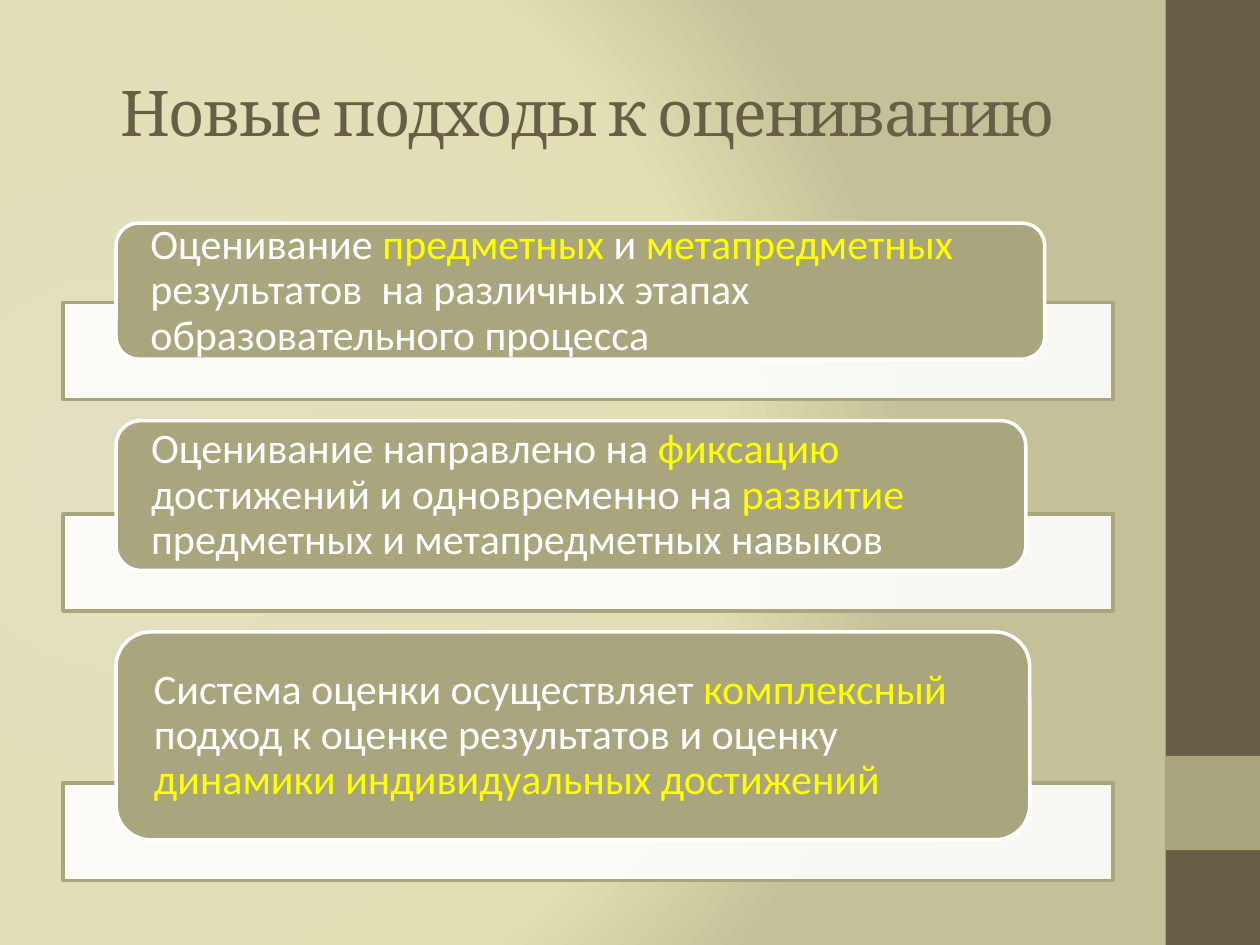
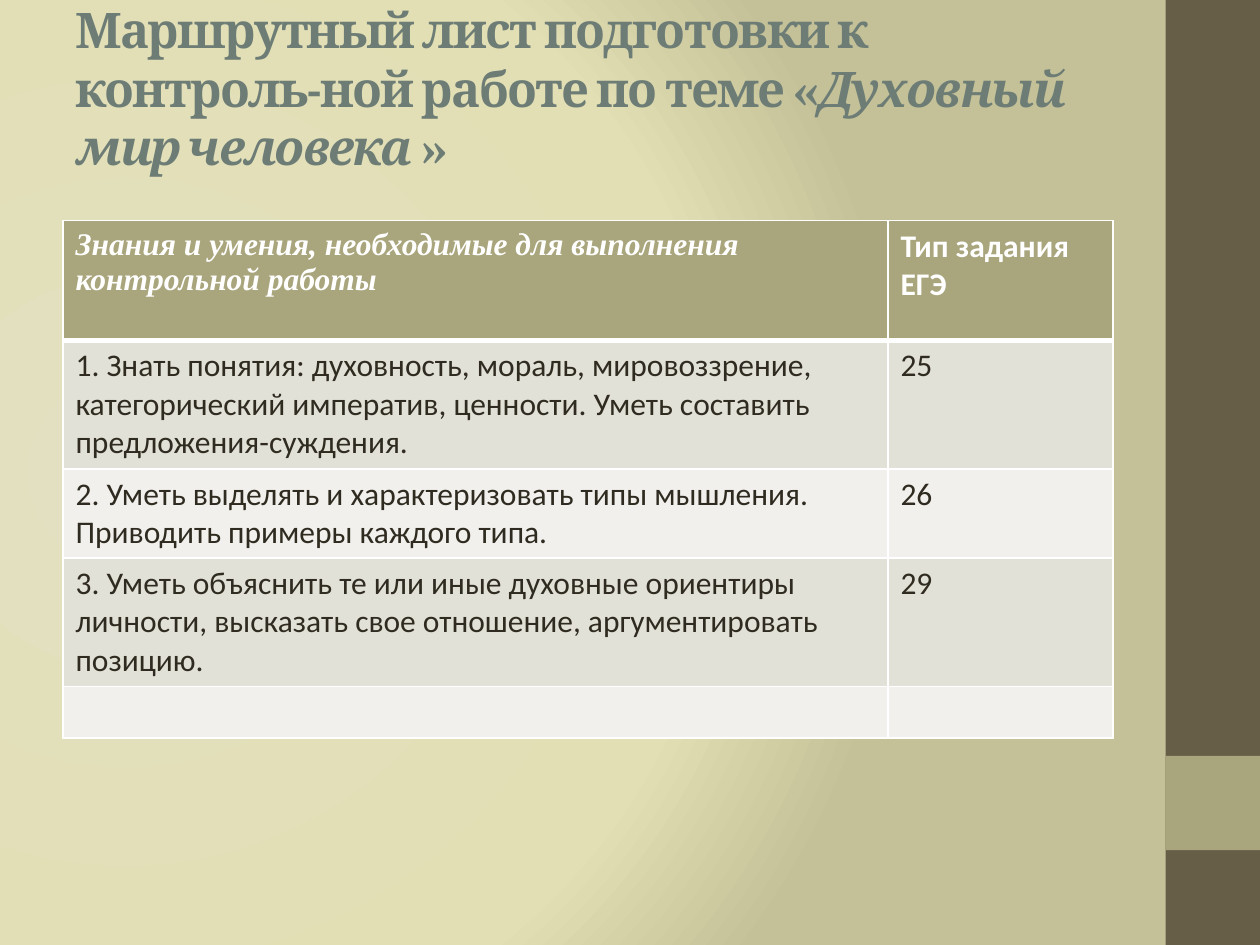
"""Build two slides on new assessment approaches and a test preparation sheet."""
from dataclasses import dataclass
from typing import NamedTuple, Optional

from lxml import etree
from pptx import Presentation
from pptx.dml.color import RGBColor
from pptx.enum import shapes, text
from pptx.oxml import parse_xml
from pptx.oxml.ns import nsdecls, qn
from pptx.util import Cm, Pt

WHITE = RGBColor(0xFF, 0xFF, 0xFF)
YELLOW = RGBColor(0xFF, 0xFF, 0x00)
BROWN = RGBColor(0x67, 0x5E, 0x47)
OLIVE = RGBColor(0xA9, 0xA5, 0x7C)
SLATE = RGBColor(0x6D, 0x7D, 0x76)
INK = RGBColor(0x2F, 0x2B, 0x20)
BAND_DARK = RGBColor(0xE2, 0xE1, 0xD7)
BAND_LIGHT = RGBColor(0xF1, 0xF0, 0xEC)
BACKDROP = (
    (0, RGBColor(0xE2, 0xE0, 0xC0)),
    (75, RGBColor(0xE2, 0xDF, 0xB4)),
    (100, RGBColor(0xC4, 0xC1, 0x98)),
)

HEADING, BODY, SERIF = "Cambria", "Calibri", "Times New Roman"
LEFT, CONTENT_W = 1.27, 21.17
SIDE_LEFT, SIDE_W = 23.5, 1.9
SLIDE_W, SLIDE_H = 25.4, 19.05
CARD_LEFT, CARDS_TOP = 2.34, 4.5
BAR_H, BAR_OVERLAP, CARD_GAP = 1.96, 1.14, 0.42


class Box(NamedTuple):
    """Position and size in centimetres."""
    left: float
    top: float
    width: float
    height: float

    def emu(self) -> list:
        """Return the four lengths for python-pptx."""
        return [Cm(v) for v in self]


@dataclass(frozen=True)
class Style:
    """Character formatting of a run."""
    font: str
    size: int
    color: RGBColor
    bold: bool = False
    italic: bool = False
    spacing: int = 0


class Span(NamedTuple):
    """A piece of text with its style."""
    words: str
    style: Style


class Card(NamedTuple):
    """A rounded card standing on a bar."""
    width: float
    height: float
    spans: tuple


class Row(NamedTuple):
    """A table row with its height, fill and cell spans."""
    height: float
    fill: RGBColor
    cells: tuple


TITLE = Style(HEADING, 36, BROWN, spacing=-100)
TOPIC = Style(HEADING, 28, SLATE, bold=True, spacing=-100)
TOPIC_NAME = Style(HEADING, 28, SLATE, bold=True, italic=True, spacing=-100)
PLAIN = Style(BODY, 24, WHITE)
KEY = Style(BODY, 24, YELLOW)
HEAD_SERIF = Style(SERIF, 18, WHITE, bold=True, italic=True)
HEAD = Style(BODY, 18, WHITE, bold=True)
CELL = Style(BODY, 18, INK)

CARDS = (
    Card(18.72, 2.74, (
        Span("Оценивание ", PLAIN),
        Span("предметных", KEY),
        Span(" и ", PLAIN),
        Span("метапредметных ", KEY),
        Span("результатов  на различных этапах образовательного процесса", PLAIN),
    )),
    Card(18.34, 3.02, (
        Span("Оценивание направлено на ", PLAIN),
        Span("фиксацию ", KEY),
        Span("достижений и одновременно на ", PLAIN),
        Span("развитие ", KEY),
        Span("предметных и метапредметных навыков", PLAIN),
    )),
    Card(18.42, 4.19, (
        Span("Система оценки осуществляет ", PLAIN),
        Span("комплексный ", KEY),
        Span("подход к оценке результатов и оценку ", PLAIN),
        Span("динамики индивидуальных достижений", KEY),
    )),
)

COLUMNS = (16.63, 4.54)
ROWS = (
    Row(2.41, OLIVE, (
        Span("Знания и умения, необходимые для выполнения контрольной работы", HEAD_SERIF),
        Span("Тип задания ЕГЭ", HEAD),
    )),
    Row(2.59, BAND_DARK, (
        Span("1. Знать понятия: духовность, мораль, мировоззрение, категорический "
             "императив, ценности. Уметь составить предложения-суждения.", CELL),
        Span("25", CELL),
    )),
    Row(1.8, BAND_LIGHT, (
        Span("2. Уметь выделять и характеризовать типы мышления. "
             "Приводить примеры каждого типа.", CELL),
        Span("26", CELL),
    )),
    Row(2.59, BAND_DARK, (
        Span("3. Уметь объяснить те или иные духовные ориентиры личности, "
             "высказать свое отношение, аргументировать позицию.", CELL),
        Span("29", CELL),
    )),
    Row(1.04, BAND_LIGHT, (None, None)),
)


def add_runs(p, spans: tuple) -> None:
    """Append styled runs to a paragraph."""
    for span in spans:
        r = p.add_run()
        r.text = span.words
        style = span.style
        r.font.name, r.font.size = style.font, Pt(style.size)
        r.font.bold, r.font.italic = style.bold, style.italic
        r.font.color.rgb = style.color
        if style.spacing:
            r._r.get_or_add_rPr().set("spc", str(style.spacing))


def add_block(slide, kind, box: Box, fill: RGBColor,
              line: Optional[RGBColor] = None, alpha: int = 100):
    """Draw a filled preset shape without a shadow."""
    sp = slide.shapes.add_shape(kind, *box.emu())
    sp.shadow.inherit = False
    sp.fill.solid()
    sp.fill.fore_color.rgb = fill
    if alpha < 100:
        color = sp._element.spPr.find(qn("a:solidFill"))[0]
        etree.SubElement(color, qn("a:alpha")).set("val", str(alpha * 1000))
    if line is None:
        sp.line.fill.background()
    else:
        sp.line.color.rgb = line
        sp.line.width = Pt(2)
    return sp


def set_backdrop(prs) -> None:
    """Give the master the circular gradient background."""
    master = prs.slide_master
    master.background.fill.solid()
    solid = master._element.cSld.find(".//" + qn("p:bgPr")).find(qn("a:solidFill"))
    stops = "".join(
        f'<a:gs pos="{pos * 1000}"><a:srgbClr val="{color}"/></a:gs>'
        for pos, color in BACKDROP)
    gradient = parse_xml(
        f'<a:gradFill {nsdecls("a")} rotWithShape="1"><a:gsLst>{stops}</a:gsLst>'
        '<a:path path="circle"><a:fillToRect l="20000" t="50000" r="100000" b="50000"/>'
        '</a:path></a:gradFill>')
    solid.getparent().replace(solid, gradient)


def new_slide(prs, title: tuple, height: float, align, bottom: float = 0.13):
    """Add a slide with its side band and title."""
    slide = prs.slides.add_slide(prs.slide_layouts[6])
    rect = shapes.MSO_SHAPE.RECTANGLE
    add_block(slide, rect, Box(SIDE_LEFT, 0, SIDE_W, SLIDE_H), BROWN)
    add_block(slide, rect, Box(SIDE_LEFT, 15.24, SIDE_W, SIDE_W), OLIVE)
    tf = slide.shapes.add_textbox(*Box(LEFT, 0.76, CONTENT_W, height).emu()).text_frame
    tf.word_wrap = True
    tf.vertical_anchor = text.MSO_ANCHOR.MIDDLE
    tf.margin_bottom = Cm(bottom)
    p = tf.paragraphs[0]
    p.alignment = align
    add_runs(p, title)
    return slide


def add_card(slide, card: Card, top: float) -> float:
    """Draw a bar with its card and return the top of the next card."""
    bar_top = top + card.height - BAR_OVERLAP
    add_block(slide, shapes.MSO_SHAPE.RECTANGLE,
              Box(LEFT, bar_top, CONTENT_W, BAR_H), WHITE, OLIVE, alpha=90)
    sp = add_block(slide, shapes.MSO_SHAPE.ROUNDED_RECTANGLE,
                   Box(CARD_LEFT, top, card.width, card.height), OLIVE, WHITE)
    tf = sp.text_frame
    tf.word_wrap = True
    tf.vertical_anchor = text.MSO_ANCHOR.MIDDLE
    tf.margin_left = tf.margin_right = Cm(0.56)
    tf.margin_top = tf.margin_bottom = 0
    p = tf.paragraphs[0]
    p.alignment = text.PP_ALIGN.LEFT
    p.line_spacing = 0.9
    add_runs(p, card.spans)
    return bar_top + BAR_H + CARD_GAP


def set_borders(cell, top: int, bottom: int) -> None:
    """Outline a cell in white with the given top and bottom widths."""
    tc_pr = cell._tc.get_or_add_tcPr()
    for side, width in (("L", 1), ("R", 1), ("T", top), ("B", bottom)):
        ln = etree.SubElement(tc_pr, qn(f"a:ln{side}"), w=str(Pt(width)))
        fill = etree.SubElement(ln, qn("a:solidFill"))
        etree.SubElement(fill, qn("a:srgbClr"), val=str(WHITE))


def add_task_table(slide) -> None:
    """Draw the table of skills and exam task types."""
    box = Box(LEFT, 4.45, CONTENT_W, sum(row.height for row in ROWS))
    table = slide.shapes.add_table(len(ROWS), len(COLUMNS), *box.emu()).table
    table.horz_banding = False
    for column, width in zip(table.columns, COLUMNS):
        column.width = Cm(width)
    for i, row in enumerate(ROWS):
        table.rows[i].height = Cm(row.height)
        for j, span in enumerate(row.cells):
            cell = table.cell(i, j)
            set_borders(cell, top=3 if i == 1 else 1, bottom=3 if i == 0 else 1)
            cell.fill.solid()
            cell.fill.fore_color.rgb = row.fill
            if span:
                add_runs(cell.text_frame.paragraphs[0], (span,))


def main() -> None:
    """Build and save the presentation."""
    prs = Presentation()
    prs.slide_width, prs.slide_height = Cm(SLIDE_W), Cm(SLIDE_H)
    set_backdrop(prs)

    approaches = new_slide(prs, (Span("Новые подходы к оцениванию", TITLE),),
                           2.97, text.PP_ALIGN.CENTER)
    top = CARDS_TOP
    for card in CARDS:
        top = add_card(approaches, card, top)

    route_sheet = new_slide(prs, (
        Span("Маршрутный лист подготовки к контроль-ной работе по теме «", TOPIC),
        Span("Духовный мир человека ", TOPIC_NAME),
        Span("»", TOPIC),
    ), 3.18, text.PP_ALIGN.LEFT, bottom=1.3)
    add_task_table(route_sheet)
    prs.save("out.pptx")


if __name__ == "__main__":
    main()
